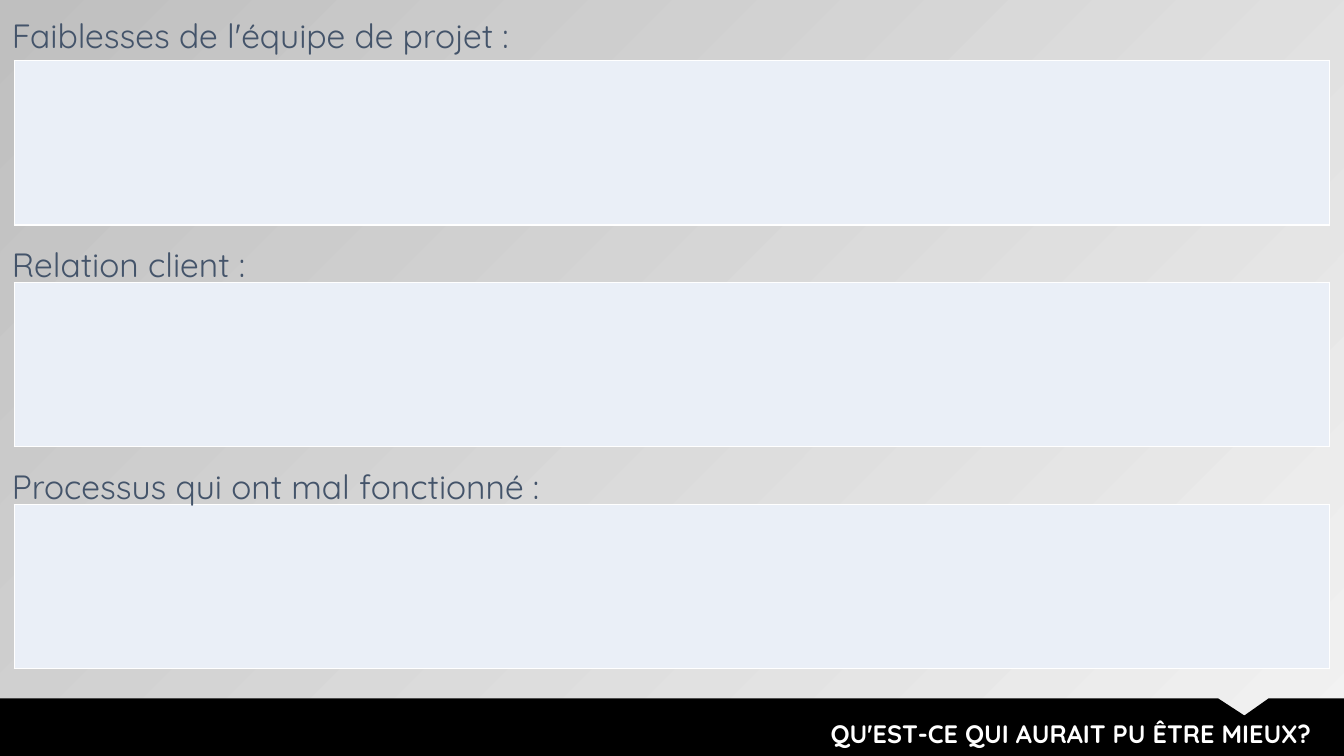
"""Build the project review slide on what could have gone better."""
from dataclasses import dataclass

from lxml.etree import SubElement
from pptx import Presentation
from pptx.dml.color import RGBColor
from pptx.enum.text import MSO_ANCHOR, PP_ALIGN
from pptx.oxml.ns import qn
from pptx.util import Cm, Pt


@dataclass(frozen=True)
class Theme:
    font: str = "Quicksand"
    title_size: Pt = Pt(18)
    heading_size: Pt = Pt(24)
    light: RGBColor = RGBColor(0xF2, 0xF2, 0xF2)
    grey: RGBColor = RGBColor(0xBF, 0xBF, 0xBF)
    band: RGBColor = RGBColor(0x00, 0x00, 0x00)
    white: RGBColor = RGBColor(0xFF, 0xFF, 0xFF)
    heading: RGBColor = RGBColor(0x44, 0x54, 0x6A)
    answer: RGBColor = RGBColor(0xEA, 0xEF, 0xF7)


def set_font(paragraph, size, color, bold=False):
    font = paragraph.font
    font.name, font.size, font.bold = theme.font, size, bold
    font.color.rgb = color


def set_borders(cell, color):
    properties = cell._tc.get_or_add_tcPr()
    for position, side in enumerate(("lnL", "lnR", "lnT", "lnB")):
        line = SubElement(properties, qn(f"a:{side}"), w=str(Pt(1)))
        fill = SubElement(line, qn("a:solidFill"))
        SubElement(fill, qn("a:srgbClr"), val=str(color))
        properties.insert(position, line)


theme = Theme()
presentation = Presentation()
presentation.slide_width, presentation.slide_height = Cm(33.87), Cm(19.05)
slide = presentation.slides.add_slide(presentation.slide_layouts[5])

backdrop = slide.background.fill
backdrop.gradient()
backdrop.gradient_angle = 135
for stop, color in zip(backdrop.gradient_stops, (theme.light, theme.grey)):
    stop.color.rgb = color

band_top = Cm(17.6)
outline = slide.shapes.build_freeform(0, band_top)
outline.add_line_segments([
    (Cm(30.7), band_top), (Cm(31.36), Cm(18.03)), (Cm(31.97), band_top),
    (Cm(33.87), band_top), (Cm(33.87), Cm(19.05)), (0, Cm(19.05)),
])
band = outline.convert_to_shape()
band.shadow.inherit = False
band.fill.solid()
band.fill.fore_color.rgb = theme.band
band.line.fill.background()

title = slide.shapes.title
slide.shapes._spTree.append(title._element)
title.left, title.top, title.width, title.height = Cm(10.52), Cm(17.98), Cm(23), Cm(1.03)
title_frame = title.text_frame
title_frame.text = "QU'EST-CE QUI AURAIT PU ÊTRE MIEUX?"
title_frame.vertical_anchor = MSO_ANCHOR.TOP
title_frame.margin_right = Cm(0.48)
title_line = title_frame.paragraphs[0]
title_line.alignment = PP_ALIGN.RIGHT
set_font(title_line, theme.title_size, theme.white, bold=True)

sections = [
    ("Faiblesses de l'équipe de projet :", 1.04, Pt(21.5)),
    ("Relation client :", 1.33, 1.2),
    ("Processus qui ont mal fonctionné :", 1.33, 1.2),
]
for index, (heading, rise, spacing) in enumerate(sections):
    answer_top = 1.53 + 5.59 * index

    answer = slide.shapes.add_table(
        1, 1, Cm(0.36), Cm(answer_top), Cm(33.15), Cm(4.14)).table
    answer.first_row = answer.horz_banding = False
    answer_cell = answer.cell(0, 0)
    answer_cell.fill.solid()
    answer_cell.fill.fore_color.rgb = theme.answer
    set_borders(answer_cell, theme.white)

    heading_frame = slide.shapes.add_textbox(
        0, Cm(answer_top - rise), Cm(19.38), Cm(rise + 0.1)).text_frame
    heading_frame.word_wrap = True
    heading_frame.margin_left = heading_frame.margin_right = Cm(0.3)
    heading_frame.margin_top = heading_frame.margin_bottom = Cm(0.15)
    heading_frame.text = heading
    heading_line = heading_frame.paragraphs[0]
    heading_line.line_spacing = spacing
    heading_line.space_before = Pt(4.8)
    set_font(heading_line, theme.heading_size, theme.heading)

presentation.save("out.pptx")
